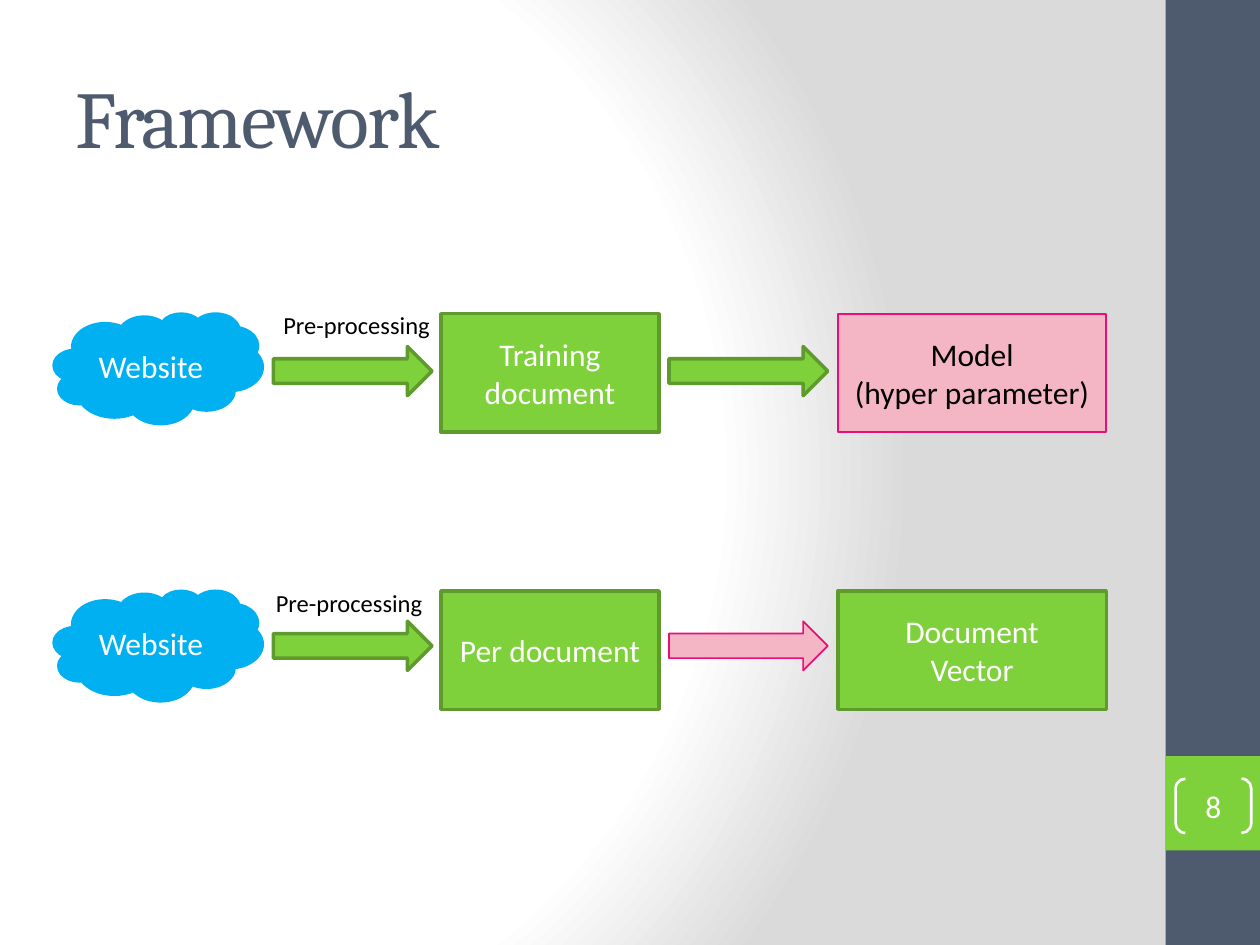
"""Build the framework slide: two flows from source to result."""
from dataclasses import dataclass

from pptx import Presentation
from pptx.dml.color import RGBColor
from pptx.enum.shapes import MSO_SHAPE as Shape
from pptx.enum.text import MSO_ANCHOR as Anchor, PP_ALIGN as Align
from pptx.oxml import parse_xml
from pptx.oxml.ns import nsdecls
from pptx.util import Pt

WHITE, BLACK, NAVY = "FFFFFF", "000000", "4E5B6F"
GREEN, MOSS, PINK, ROSE, SKY = "7FD13B", "5E9B2C", "F4B5C5", "EA0F77", "00B0F0"


@dataclass
class Look:
    """Fill, outline, line width and text colour of a shape."""
    fill: str | None
    line: str | None = None
    width: float = 0
    ink: str = WHITE


@dataclass
class Flow:
    """One row of the diagram."""
    top: float
    arrow: float
    note: tuple[float, float]
    mid: str
    last: str
    link: Look
    end: Look


LEAF = Look(GREEN, MOSS, 2)
BLUSH = Look(PINK, ROSE, 1, BLACK)
CLOUD = Look(SKY, SKY, 2)
FLOWS = [
    Flow(179.3, 198, (154.8, 173.5), "Training document",
         "Model\n(hyper parameter)", LEAF, BLUSH),
    Flow(337.7, 355, (150.5, 332.6), "Per document",
         "Document\nVector", BLUSH, LEAF),
]


def tint(code: str) -> RGBColor:
    """Turn a hex string into a colour."""
    return RGBColor.from_string(code)


def write(frame, text: str, size: float, ink: str, face: str = "Calibri",
          align=Align.CENTER) -> None:
    """Set the text of a frame and format its runs."""
    frame.text = text
    for para in frame.paragraphs:
        para.alignment = align
        for run in para.runs:
            run.font.size, run.font.name = Pt(size), face
            run.font.color.rgb = tint(ink)


def draw(slide, kind, x: float, y: float, w: float, h: float, look: Look,
         text: str = ""):
    """Add a preset shape with its look and centred text."""
    shape = slide.shapes.add_shape(kind, Pt(x), Pt(y), Pt(w), Pt(h))
    shape.shadow.inherit = False
    if look.fill:
        shape.fill.solid()
        shape.fill.fore_color.rgb = tint(look.fill)
    else:
        shape.fill.background()
    if look.line:
        shape.line.color.rgb = tint(look.line)
        shape.line.width = Pt(look.width)
    else:
        shape.line.fill.background()
    if text:
        shape.text_frame.vertical_anchor = Anchor.MIDDLE
        write(shape.text_frame, text, 18, look.ink)
    return shape


def shade(slide) -> None:
    """Give the slide a round gradient from white to grey."""
    slide.background.fill.solid()
    props = slide.element.xpath("//p:bgPr")[0]
    stops = "".join(
        f'<a:gs pos="{pos * 1000}"><a:srgbClr val="{code}"/></a:gs>'
        for pos, code in ((0, WHITE), (75, WHITE), (100, "DADADA")))
    props.replace(props[0], parse_xml(
        f'<a:gradFill {nsdecls("a")} rotWithShape="1"><a:gsLst>{stops}</a:gsLst>'
        '<a:path path="circle"><a:fillToRect l="20000" t="50000" r="100000" '
        'b="50000"/></a:path></a:gradFill>'))


def head(slide) -> None:
    """Place and format the title."""
    title = slide.shapes.title
    title.left, title.top, title.width, title.height = map(Pt, (36, 21.6, 599.8, 90))
    title.text_frame.vertical_anchor = Anchor.MIDDLE
    write(title.text_frame, "Framework", 46, NAVY, "Cambria", Align.LEFT)
    run = title.text_frame.paragraphs[0].runs[0]
    run.font._element.set("spc", "-100")


def side(slide) -> None:
    """Draw the side band with the page number."""
    draw(slide, Shape.RECTANGLE, 666, 0, 54, 540, Look(NAVY))
    draw(slide, Shape.RECTANGLE, 666, 432, 54, 54, Look(GREEN))
    page = draw(slide, Shape.DOUBLE_BRACKET, 671.8, 445, 43.2, 31,
                Look(None, WHITE, 1.5), "8")
    page.adjustments[0] = 0.18
    frame = page.text_frame
    frame.margin_left = frame.margin_right = 0
    frame.margin_top = frame.margin_bottom = 0


def label(slide, x: float, y: float, text: str) -> None:
    """Add a small caption on one line."""
    box = slide.shapes.add_textbox(Pt(x), Pt(y), Pt(99.4), Pt(24.3))
    box.text_frame.word_wrap = False
    write(box.text_frame, text, 14, BLACK, align=Align.LEFT)


def row(slide, flow: Flow) -> None:
    """Draw one flow from cloud to result."""
    draw(slide, Shape.CLOUD, 31, flow.top, 118.8, 62.6, CLOUD, "Website")
    draw(slide, Shape.RECTANGLE, 252, flow.top, 124.6, 67.7, LEAF, flow.mid)
    draw(slide, Shape.RECTANGLE, 478.8, flow.top, 153.4, 67.7, flow.end, flow.last)
    for x, look in ((156.2, LEAF), (382.3, flow.link)):
        draw(slide, Shape.RIGHT_ARROW, x, flow.arrow, 90.7, 28.1, look)
    label(slide, *flow.note, "Pre-processing")


def main() -> None:
    """Build and save the deck."""
    deck = Presentation()
    deck.slide_width, deck.slide_height = Pt(720), Pt(540)
    slide = deck.slides.add_slide(deck.slide_layouts[5])
    shade(slide)
    head(slide)
    side(slide)
    for flow in FLOWS:
        row(slide, flow)
    deck.save("out.pptx")


if __name__ == "__main__":
    main()
